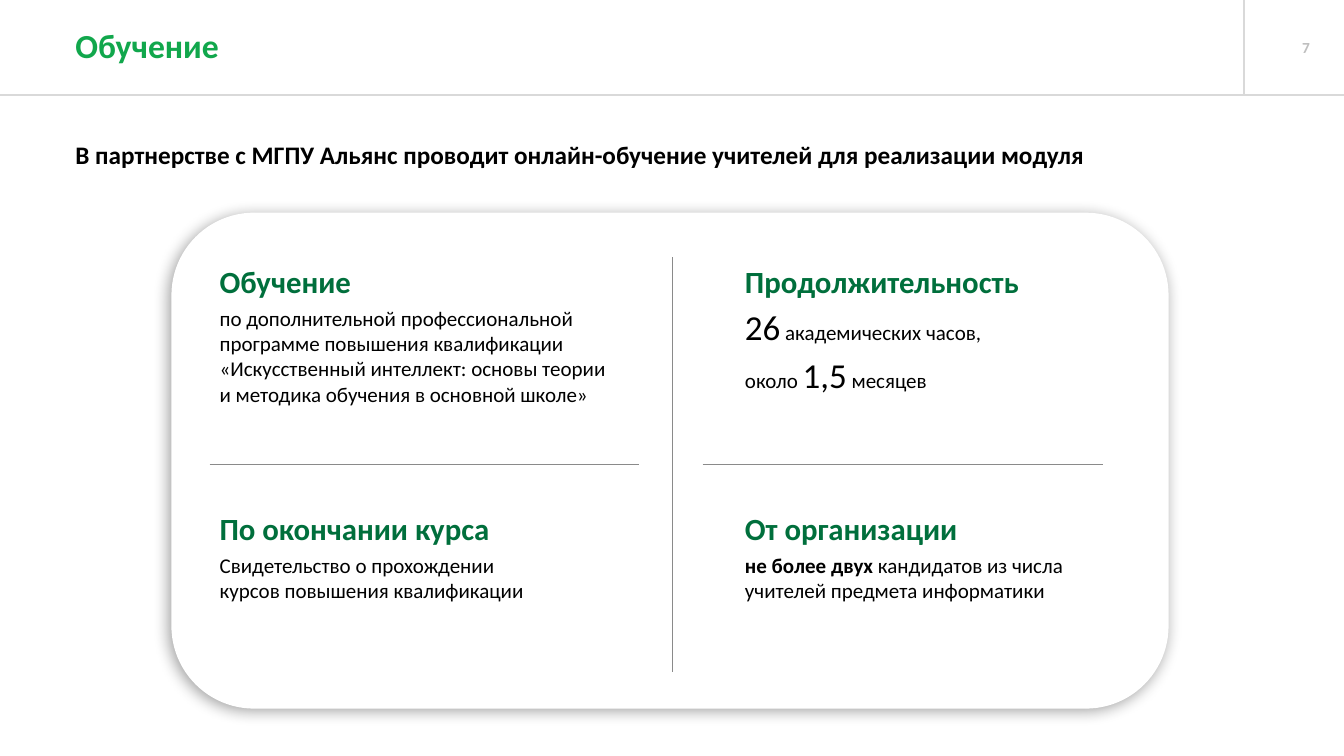
from dataclasses import dataclass

from lxml import etree
from pptx import Presentation
from pptx.dml.color import RGBColor
from pptx.enum.shapes import MSO_CONNECTOR, MSO_SHAPE
from pptx.enum.text import MSO_ANCHOR, PP_ALIGN
from pptx.oxml.ns import qn
from pptx.util import Emu, Pt

STRAIGHT = MSO_CONNECTOR.STRAIGHT
ROUND = MSO_SHAPE.ROUNDED_RECTANGLE
MIDDLE = MSO_ANCHOR.MIDDLE
RIGHT = PP_ALIGN.RIGHT
SCALE = 9144


@dataclass(frozen=True)
class Theme:
    font: str = "Calibri"
    white: str = "FFFFFF"
    black: str = "000000"
    green: str = "11A74C"
    forest: str = "006F3C"
    rule: str = "D9D9D9"
    grid: str = "8A8A8A"
    pale: str = "BFBFBF"
    title: int = 24
    lead: int = 18
    head: int = 22
    body: int = 15
    large: int = 25
    page: int = 11


THEME = Theme()

CELLS = [
    (208, 256, "Обучение", [[(
        "по дополнительной профессиональной \n"
        "программе повышения квалификации «Искусственный интеллект: основы теории \n"
        "и методика обучения в основной школе»", {})]]),
    (729, 256, "Продолжительность", [
        [("26", {"size": THEME.large}), (" академических часов,", {})],
        [("около ", {}), ("1,5", {"size": THEME.large}), (" месяцев", {})]]),
    (208, 501, "По окончании курса", [[(
        "Свидетельство о прохождении \nкурсов повышения квалификации", {})]]),
    (729, 501, "От организации", [[
        ("не более двух ", {"bold": True}),
        ("кандидатов из числа \nучителей предмета информатики", {})]]),
]


def px(n):
    return Emu(n * SCALE)


def color(code):
    return RGBColor.from_string(code)


def add_line(slide, x1, y1, x2, y2, code, width):
    line = slide.shapes.add_connector(STRAIGHT, px(x1), px(y1), px(x2), px(y2))
    line.line.color.rgb = color(code)
    line.line.width = Pt(width)
    etree.SubElement(line._element.spPr, qn("a:effectLst"))


def add_card(slide, x, y, w, h):
    card = slide.shapes.add_shape(ROUND, px(x), px(y), px(w), px(h))
    card.fill.solid()
    card.fill.fore_color.rgb = color(THEME.white)
    card.line.fill.background()
    card.shadow.inherit = False
    effects = card._element.spPr.find(qn("a:effectLst"))
    shadow = etree.SubElement(
        effects, qn("a:outerShdw"), blurRad=str(Pt(11)), dist=str(Pt(3)),
        dir=str(135 * 60000), algn="tr", rotWithShape="0")
    tint = etree.SubElement(shadow, qn("a:srgbClr"), val=THEME.black)
    etree.SubElement(tint, qn("a:alpha"), val="37000")


def add_box(slide, x, y, w, h):
    frame = slide.shapes.add_textbox(px(x), px(y), px(w), px(h)).text_frame
    frame.word_wrap = True
    return frame


def add_runs(para, text, size=None, bold=None):
    for i, part in enumerate(text.split("\n")):
        if i:
            para.add_line_break()
        run = para.add_run()
        run.text = part
        if size:
            run.font.size = Pt(size)
        if bold:
            run.font.bold = True


def write(para, runs, size, code, bold=False, after=0):
    para.space_after = Pt(after)
    font = para.font
    font.name = THEME.font
    font.size = Pt(size)
    font.color.rgb = color(code)
    if bold:
        font.bold = True
    for text, style in runs:
        add_runs(para, text, **style)


def add_label(slide, x, y, w, h, text, size, code):
    frame = add_box(slide, x, y, w, h)
    write(frame.paragraphs[0], [(text, {})], size, code, True)
    return frame


def add_cell(slide, x, y, head, body):
    frame = add_box(slide, x, y, 499, 150)
    write(frame.paragraphs[0], [(head, {})], THEME.head, THEME.forest, True, 4)
    for runs in body:
        write(frame.add_paragraph(), runs, THEME.body, THEME.black, after=4)


def main():
    deck = Presentation()
    deck.slide_width, deck.slide_height = px(1333), px(750)
    slide = deck.slides.add_slide(deck.slide_layouts[6])

    add_line(slide, 1234, 0, 1234, 94, THEME.rule, 1.5)
    add_line(slide, 0, 94, 1333, 94, THEME.rule, 1.5)
    page = add_label(slide, 1257, 33, 52, 29, "7", THEME.page, THEME.pale)
    page.paragraphs[0].alignment = RIGHT
    add_card(slide, 170, 211, 989, 492)

    title = add_label(slide, 65, 0, 984, 94, "Обучение", THEME.title, THEME.green)
    title.vertical_anchor = MIDDLE
    title.paragraphs[0].line_spacing = 0.9
    add_label(
        slide, 65, 133, 1046, 40,
        "В партнерстве с МГПУ Альянс проводит онлайн-обучение учителей для реализации модуля",
        THEME.lead, THEME.black)

    for cell in CELLS:
        add_cell(slide, *cell)
    for ends in [(208, 461, 634, 461), (697, 461, 1094, 461), (667, 255, 667, 667)]:
        add_line(slide, *ends, THEME.grid, 1)

    deck.save("out.pptx")


if __name__ == "__main__":
    main()
